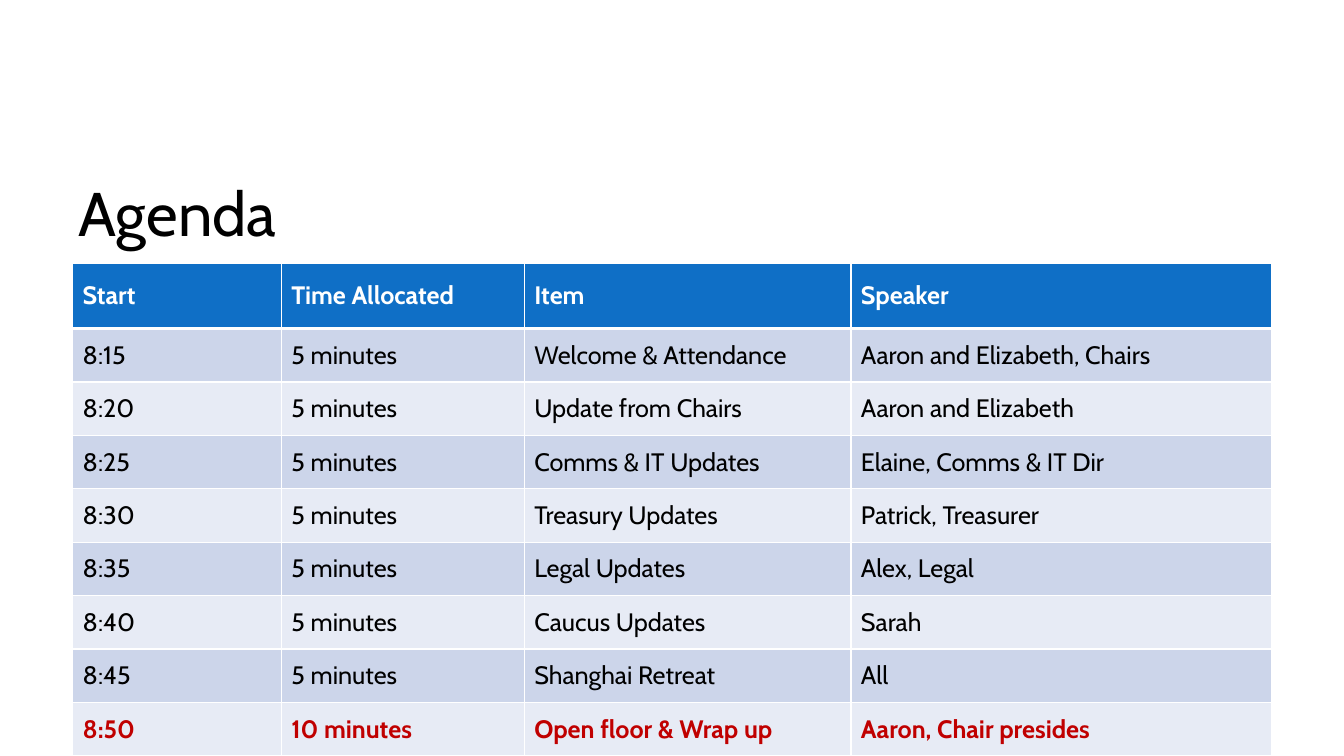
from lxml.etree import SubElement
from pptx import Presentation
from pptx.dml.color import RGBColor
from pptx.enum.text import MSO_ANCHOR as Anchor
from pptx.oxml.ns import qn
from pptx.util import Inches, Pt

FONT = "Cabin"
WHITE, BLACK, RED = "FFFFFF", "000000", "C00000"
HEADER_BLUE, BANDS = "0F6FC6", ("CCD5EA", "E7EBF5")
COLUMN_WIDTHS = (2.07, 2.41, 3.24, 4.17)
HEADER_HEIGHT, ROW_HEIGHT = 0.65, 0.53
AGENDA = (
    ("Start", "Time Allocated", "Item", "Speaker"),
    ("8:15", "5 minutes", "Welcome & Attendance", "Aaron and Elizabeth, Chairs"),
    ("8:20", "5 minutes", "Update from Chairs", "Aaron and Elizabeth"),
    ("8:25", "5 minutes", "Comms & IT Updates", "Elaine, Comms & IT Dir"),
    ("8:30", "5 minutes", "Treasury Updates", "Patrick, Treasurer"),
    ("8:35", "5 minutes", "Legal Updates", "Alex, Legal"),
    ("8:40", "5 minutes", "Caucus Updates", "Sarah"),
    ("8:45", "5 minutes", "Shanghai Retreat", "All"),
    ("8:50", "10 minutes", "Open floor & Wrap up", "Aaron, Chair presides"),
)


def color(value):
    return RGBColor.from_string(value)


def write(frame, text, size, ink, bold=False):
    para = frame.paragraphs[0]
    para.text = text
    para.font.name = FONT
    para.font.size = Pt(size)
    para.font.bold = bold
    para.font.color.rgb = color(ink)
    return para


def add_title(page, text):
    box = page.shapes.add_textbox(Inches(0.68), Inches(1.42), Inches(10.41), Inches(1.45))
    frame = box.text_frame
    frame.word_wrap = True
    frame.vertical_anchor = Anchor.MIDDLE
    write(frame, text, 44, BLACK).line_spacing = 0.9


def add_borders(cell, top, bottom):
    properties = cell._tc.get_or_add_tcPr()
    for side, width in (("L", 1), ("R", 1), ("T", top), ("B", bottom)):
        line = SubElement(properties, qn(f"a:ln{side}"), w=str(Pt(width)))
        fill = SubElement(line, qn("a:solidFill"))
        SubElement(fill, qn("a:srgbClr"), val=WHITE)


def row_style(index):
    if index == 0:
        return HEADER_BLUE, WHITE, True
    last = index == len(AGENDA) - 1
    return BANDS[(index - 1) % 2], RED if last else BLACK, last


def add_agenda(page):
    heights = [HEADER_HEIGHT] + [ROW_HEIGHT] * (len(AGENDA) - 1)
    table = page.shapes.add_table(
        len(AGENDA), len(COLUMN_WIDTHS), Inches(0.72), Inches(2.61),
        Inches(sum(COLUMN_WIDTHS)), Inches(sum(heights)),
    ).table
    for column, width in zip(table.columns, COLUMN_WIDTHS):
        column.width = Inches(width)
    for index, (row, height, texts) in enumerate(zip(table.rows, heights, AGENDA)):
        row.height = Inches(height)
        background, ink, bold = row_style(index)
        for cell, text in zip(row.cells, texts):
            add_borders(cell, 3 if index == 1 else 1, 3 if index == 0 else 1)
            cell.fill.solid()
            cell.fill.fore_color.rgb = color(background)
            cell.vertical_anchor = Anchor.MIDDLE
            write(cell.text_frame, text, 18, ink, bold)


def main():
    deck = Presentation()
    deck.slide_width, deck.slide_height = Inches(13.33), Inches(7.5)
    page = deck.slides.add_slide(deck.slide_layouts[6])
    add_title(page, "Agenda")
    add_agenda(page)
    deck.save("out.pptx")


if __name__ == "__main__":
    main()
